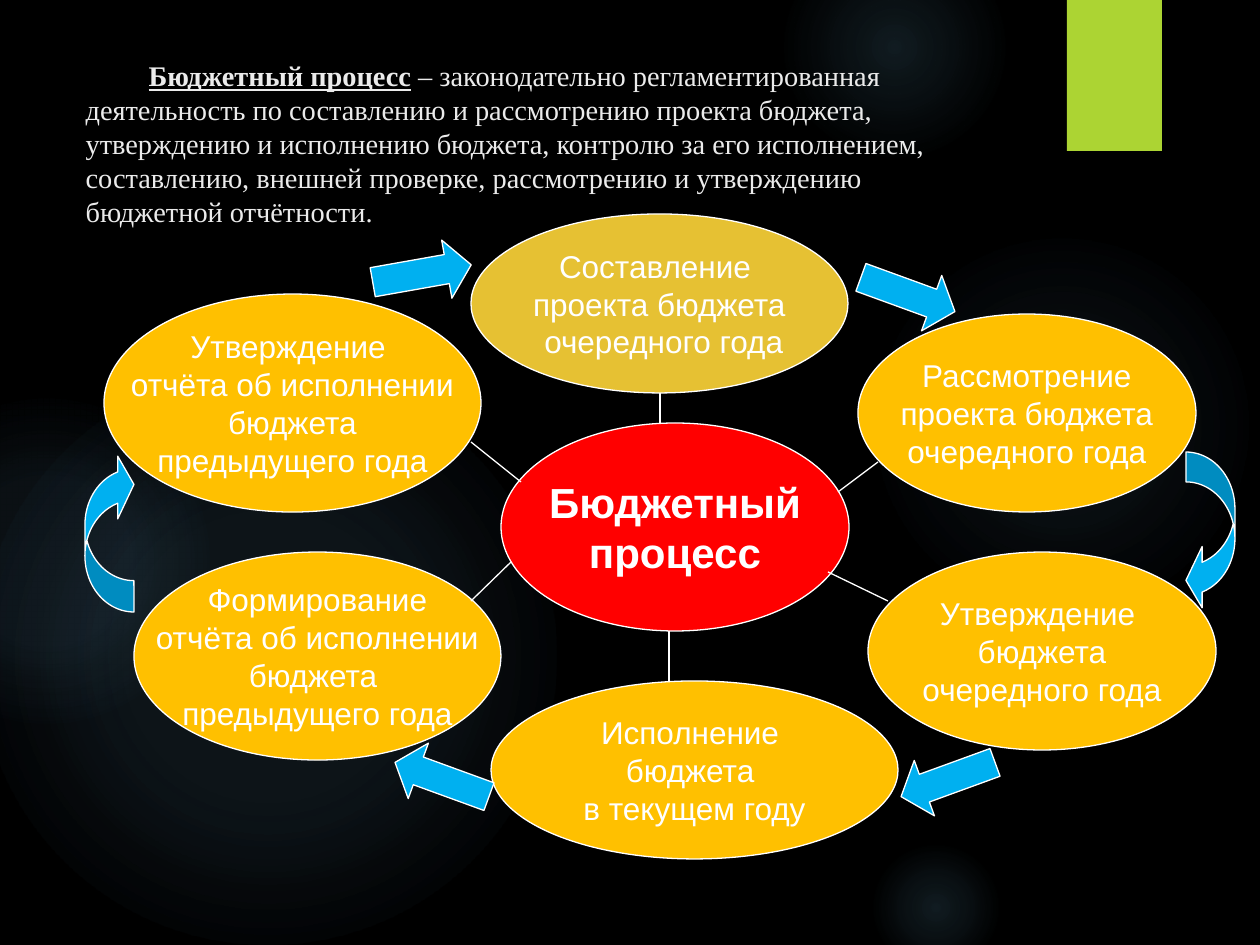
from lxml import etree
from pptx import Presentation
from pptx import util as u
from pptx.dml.color import RGBColor
from pptx.enum import shapes, text
from pptx.oxml import parse_xml
from pptx.oxml.ns import nsdecls, qn

COLORS = {"back": "000000", "glow": "7AC4F0", "tab": "ACD433", "title": "EBEBEB",
          "white": "FFFFFF", "center": "FF0000", "stage": "FFC000",
          "first": "E6C133", "arrow": "00B0F0"}

DEFINITION = [
    ("Бюджетный процесс", True),
    (" – законодательно регламентированная деятельность по составлению и "
     "рассмотрению проекта бюджета, утверждению и исполнению бюджета, контролю "
     "за его исполнением, составлению, внешней проверке, рассмотрению и "
     "утверждению бюджетной отчётности.", False),
]
CENTER = ((501, 423, 348, 208), ["Бюджетный", "процесс"])
STAGES = [
    ((104, 294, 377, 218), "stage",
     ["Утверждение ", "отчёта об исполнении", " бюджета ", "предыдущего года"]),
    ((134, 552, 367, 208), "stage",
     ["Формирование", "отчёта об исполнении", "бюджета ", "предыдущего года"]),
    ((491, 681, 407, 178), "stage", ["Исполнение ", "бюджета ", "в текущем году"]),
    ((868, 552, 348, 198), "stage", ["Утверждение ", "бюджета", "очередного года"]),
    ((858, 314, 338, 198), "stage", ["Рассмотрение", "проекта бюджета", "очередного года"]),
    ((471, 214, 377, 179), "first", ["Составление ", "проекта бюджета", " очередного года"]),
]
SPOKES = [(471, 442, 521, 482), (660, 393, 660, 423), (838, 492, 878, 462),
          (511, 562, 471, 601), (669, 631, 669, 681), (828, 572, 888, 601)]
STRAIGHT_ARROWS = [(372, 244, 350), (858, 265, 20), (898, 750, 160), (392, 750, 200)]
STRAIGHT_SIZE = (100, 59)
CURVED_ARROWS = [
    ("CURVED_LEFT_ARROW", (1186, 452, 49, 159), 0, (0.61, 1.25, 0.33)),
    ("CURVED_DOWN_ARROW", (30, 508, 159, 49), 270, (0.64, 1.28, 0.33)),
]
GLOWS = [
    ((868, 231, 388), ((0, 7), (36, 6), (69, 0))),
    ((784, -63, 221), ((0, 14), (36, 7), (73, 0))),
    ((868, 840, 136), ((0, 14), (36, 7), (66, 0))),
    ((-21, 368, 577), ((0, 11), (36, 10), (75, 0))),
    ((-116, 399, 325), ((0, 8), (36, 8), (72, 0))),
]


def px(value):
    return u.Emu(round(value * 914400 / 126))


def rgb(name):
    return RGBColor.from_string(COLORS[name])


def add_figure(kind, box, fill, outlined=True, rotation=0, adjust=()):
    figure = slide.shapes.add_shape(getattr(shapes.MSO_SHAPE, kind), *map(px, box))
    figure.shadow.inherit = False
    figure.rotation = rotation
    for index, value in enumerate(adjust):
        figure.adjustments[index] = value
    figure.fill.solid()
    figure.fill.fore_color.rgb = rgb(fill)
    if outlined:
        figure.line.color.rgb = rgb("white")
        figure.line.width = u.Pt(0.75)
    else:
        figure.line.fill.background()
    return figure


def add_glow(left, top, size, stops):
    glow = add_figure("OVAL", (left, top, size, size), "glow", outlined=False)
    marks = "".join(
        f'<a:gs pos="{at * 1000}"><a:srgbClr val="{COLORS["glow"]}">'
        f'<a:alpha val="{alpha * 1000}"/></a:srgbClr></a:gs>' for at, alpha in stops)
    gradient = parse_xml(
        f'<a:gradFill {nsdecls("a")}><a:gsLst>{marks}</a:gsLst><a:path path="circle">'
        '<a:fillToRect l="50000" t="50000" r="50000" b="50000"/></a:path></a:gradFill>')
    properties = glow._element.spPr
    properties.replace(properties.find(qn("a:solidFill")), gradient)


def write(paragraph, words, size=18, font="Arial", color="white", bold=False, underline=False):
    run = paragraph.add_run()
    run.text = words
    run.font.size, run.font.name = u.Pt(size), font
    run.font.bold, run.font.underline = bold, underline
    run.font.color.rgb = rgb(color)


def add_stage(box, fill, lines, **style):
    frame = add_figure("OVAL", box, fill).text_frame
    frame.word_wrap = False
    frame.vertical_anchor = text.MSO_ANCHOR.MIDDLE
    for index, line in enumerate(lines):
        paragraph = frame.add_paragraph() if index else frame.paragraphs[0]
        paragraph.alignment = text.PP_ALIGN.CENTER
        write(paragraph, line, **style)


deck = Presentation()
deck.slide_width, deck.slide_height = px(1260), px(945)
slide = deck.slides.add_slide(deck.slide_layouts[5])
slide.background.fill.solid()
slide.background.fill.fore_color.rgb = rgb("back")

for place, stops in GLOWS:
    add_glow(*place, stops)
add_figure("RECTANGLE", (1067, 0, 95, 151), "tab", outlined=False)

title = slide.shapes.title
slide.shapes._spTree.append(title._element)
title.left, title.top, title.width, title.height = map(px, (73, 52, 874, 181))
title.text_frame.word_wrap = True
title.text_frame.auto_size = text.MSO_AUTO_SIZE.NONE
title.text_frame.vertical_anchor = text.MSO_ANCHOR.TOP
definition = title.text_frame.paragraphs[0]
definition.alignment = text.PP_ALIGN.LEFT
definition._p.get_or_add_pPr().set("indent", str(px(63)))
for words, is_term in DEFINITION:
    write(definition, words, size=16.2, font="Times New Roman", color="title",
          bold=is_term, underline=is_term)

add_stage(CENTER[0], "center", CENTER[1], size=24, bold=True)
for box, fill, lines in STAGES:
    add_stage(box, fill, lines)

for ends in SPOKES:
    spoke = slide.shapes.add_connector(shapes.MSO_CONNECTOR.STRAIGHT, *map(px, ends))
    spoke.line.color.rgb = rgb("white")
    spoke.line.width = u.Pt(0.75)
    etree.SubElement(spoke._element.spPr, qn("a:effectLst"))

for left, top, rotation in STRAIGHT_ARROWS:
    add_figure("RIGHT_ARROW", (left, top, *STRAIGHT_SIZE), "arrow",
               rotation=rotation, adjust=(0.5, 0.42))
for kind, box, rotation, adjust in CURVED_ARROWS:
    add_figure(kind, box, "arrow", rotation=rotation, adjust=adjust)

deck.save("out.pptx")
